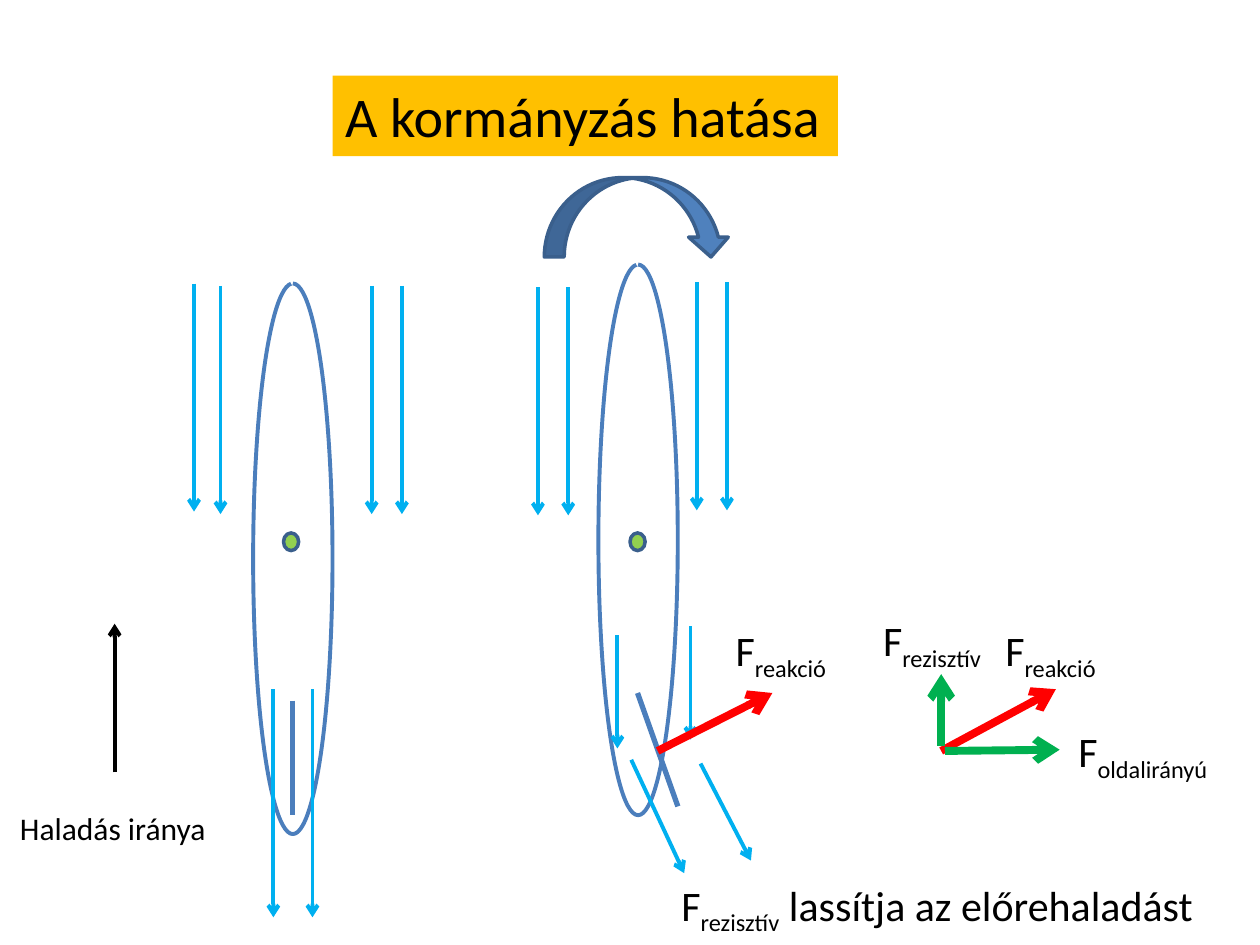
from lxml.etree import SubElement
from pptx import Presentation
from pptx.dml.color import RGBColor
from pptx.enum.shapes import MSO_CONNECTOR, MSO_SHAPE
from pptx.enum.text import MSO_AUTO_SIZE
from pptx.oxml.ns import qn
from pptx.util import Inches, Pt

COLORS = {
    "title": "FFC000", "text": "000000", "hull": "4B7EBC", "turn": "4F81BD",
    "outline": "3A5F8C", "pivot": "92D050", "flow": "00B0F0",
    "reaction": "FF0000", "component": "00B050", "heading": "000000",
}


def rgb(name):
    return RGBColor.from_string(COLORS[name])


class Diagram:
    font = "Calibri"

    def __init__(self, slide):
        self.shapes = slide.shapes

    def shape(self, kind, box, fill=None, line=None, width=2):
        item = self.shapes.add_shape(kind, *map(Inches, box))
        item.shadow.inherit = False
        if fill:
            item.fill.solid()
            item.fill.fore_color.rgb = rgb(fill)
        else:
            item.fill.background()
        if line:
            item.line.color.rgb = rgb(line)
            item.line.width = Pt(width)
        else:
            item.line.fill.background()
        return item

    def hull(self, left, top):
        """Draw a boat outline as an almost closed arc, open at the bow."""
        outline = self.shape(MSO_SHAPE.ARC, (left, top, 0.63, 4.37), line="hull", width=2.25)
        # Adjustments are angles in 1/60000 degree, divided by 100000.
        outline.adjustments[0] = 162
        outline.adjustments[1] = 161.78

    def line(self, start, end, color, width=2.25, arrow=True):
        link = self.shapes.add_connector(MSO_CONNECTOR.STRAIGHT, *map(Inches, (*start, *end)))
        link.line.color.rgb = rgb(color)
        link.line.width = Pt(width)
        if arrow:
            SubElement(link.line._get_or_add_ln(), qn("a:tailEnd"), type="arrow")
        SubElement(link._element.spPr, qn("a:effectLst"))

    def flow(self, x, top, length=1.81):
        self.line((x, top), (x, top + length), "flow")

    def text(self, box, words, size=24, subscript="", rest="", fill=None):
        label = self.shapes.add_textbox(*map(Inches, box))
        if fill:
            label.fill.solid()
            label.fill.fore_color.rgb = rgb(fill)
        frame = label.text_frame
        frame.word_wrap = False
        frame.auto_size = MSO_AUTO_SIZE.SHAPE_TO_FIT_TEXT
        paragraph = frame.paragraphs[0]
        paragraph.font.name = self.font
        paragraph.font.size = Pt(size)
        paragraph.font.color.rgb = rgb("text")
        for part in filter(None, (words, subscript, rest)):
            run = paragraph.add_run()
            run.text = part
            if part == subscript:
                run._r.get_or_add_rPr().set("baseline", "-25000")


def main():
    deck = Presentation()
    deck.slide_width, deck.slide_height = Inches(10), Inches(7.5)
    diagram = Diagram(deck.slides.add_slide(deck.slide_layouts[6]))

    diagram.text((2.64, 0.6, 4.01, 0.64), "A kormányzás hatása", 32, fill="title")

    diagram.hull(2.01, 2.25)
    diagram.hull(4.75, 2.1)
    for bow, stern in (((2.32, 5.56), (2.32, 6.47)), ((5.06, 5.5), (5.38, 6.4))):
        diagram.line(bow, stern, "hull", 3, arrow=False)

    for x, top in ((1.54, 2.25), (1.75, 2.27), (2.95, 2.27), (3.19, 2.27),
                   (4.27, 2.28), (4.51, 2.28), (5.53, 2.24), (5.77, 2.24),
                   (2.17, 5.47), (2.48, 5.47)):
        diagram.flow(x, top)
    for x, top in ((4.9, 5.04), (5.48, 4.97)):
        diagram.flow(x, top, 0.9)
    diagram.line((5.01, 6.03), (5.43, 6.93), "flow")
    diagram.line((5.56, 6.06), (5.96, 6.83), "flow")

    diagram.shape(MSO_SHAPE.CURVED_DOWN_ARROW, (4.32, 1.41, 1.48, 0.63), "turn", "outline")

    for start, end, color in (((5.22, 5.96), (6.13, 5.5), "reaction"),
                              ((7.47, 5.96), (8.38, 5.47), "reaction"),
                              ((7.47, 5.92), (7.47, 5.35), "component"),
                              ((7.5, 5.96), (8.41, 5.95), "component")):
        diagram.line(start, end, color, 4.5)

    for left, top, width, force in ((5.74, 4.91, 1.01, "reakció"),
                                    (7.88, 4.91, 1.01, "reakció"),
                                    (6.91, 4.83, 1.09, "rezisztív"),
                                    (8.46, 5.71, 1.36, "oldalirányú")):
        diagram.text((left, top, width, 0.5), "F", subscript=force)

    for left in (2.25, 5):
        diagram.shape(MSO_SHAPE.OVAL, (left, 4.23, 0.12, 0.14), "pivot", "outline")

    diagram.line((0.91, 6.13), (0.91, 4.95), "heading")
    diagram.text((0.06, 6.37, 1.69, 0.4), "Haladás iránya", 18)
    diagram.text((5.31, 6.93, 4.4, 0.5), "F", subscript="rezisztív",
                 rest=" lassítja az előrehaladást")

    deck.save("out.pptx")


if __name__ == "__main__":
    main()
